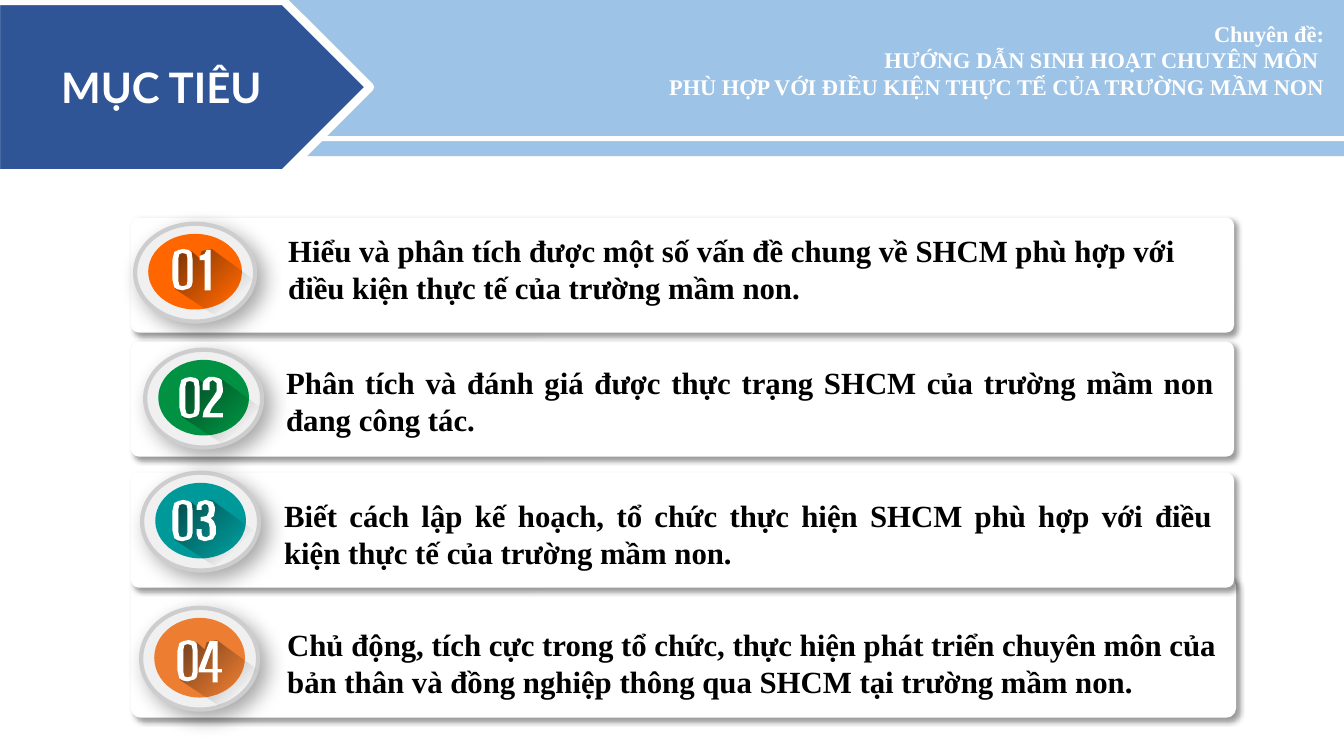
from dataclasses import dataclass

from lxml import etree
from pptx import Presentation
from pptx.dml.color import RGBColor
from pptx.enum.shapes import MSO_SHAPE
from pptx.enum.text import MSO_ANCHOR, PP_ALIGN
from pptx.oxml.ns import qn
from pptx.util import Inches, Pt

RECT, ROUNDED = MSO_SHAPE.RECTANGLE, MSO_SHAPE.ROUNDED_RECTANGLE
OVAL, PENTAGON = MSO_SHAPE.OVAL, MSO_SHAPE.PENTAGON
LEFT, RIGHT, CENTER, JUSTIFY = PP_ALIGN.LEFT, PP_ALIGN.RIGHT, PP_ALIGN.CENTER, PP_ALIGN.JUSTIFY
MIDDLE = MSO_ANCHOR.MIDDLE


@dataclass(frozen=True)
class Theme:
    white: str = "FFFFFF"
    ink: str = "000000"
    band: str = "9DC3E6"
    tag: str = "2F5597"
    ring: str = "F0F0F0"
    rim: str = "CDCDD0"
    facet: str = "0D0D0D"
    body_font: str = "Times New Roman"
    title_font: str = "Lato"
    title_size: int = 30
    goal_size: int = 22
    topic_size: int = 16


@dataclass(frozen=True)
class Goal:
    """One card; text, ring, zero and digit are offsets from the card's corner."""
    card: tuple
    text: tuple
    ring: tuple
    zero: tuple
    digit: tuple
    number: int
    colour: str
    align: int
    wording: str


THEME = Theme()
TOPIC = (
    "Chuyên đề:",
    "HƯỚNG DẪN SINH HOẠT CHUYÊN MÔN ",
    "PHÙ HỢP VỚI ĐIỀU KIỆN THỰC TẾ CỦA TRƯỜNG MẦM NON",
)
GOALS = (
    Goal((1.3, 5.72, 10.96, 1.4), (1.45, 0.44, 9.41, 0.84), (0.1, 0.31, 1.16, 1.01),
         (0.46, 0.63), (0.67, 0.64), 4, "ED7D31", JUSTIFY,
         "Chủ động, tích cực trong tổ chức, thực hiện phát triển chuyên môn của "
         "bản thân và đồng nghiệp thông qua SHCM tại trường mầm non."),
    Goal((1.3, 4.69, 10.94, 1.14), (1.42, 0.19, 9.4, 0.84), (0.11, 0, 1.16, 0.97),
         (0.41, 0.27), (0.65, 0.27), 3, "009999", JUSTIFY,
         "Biết cách lập kế hoạch, tổ chức thực hiện SHCM phù hợp với điều kiện "
         "thực tế của trường mầm non."),
    Goal((1.3, 2.16, 10.94, 1.14), (1.46, 0.09, 9.48, 0.84), (0.04, 0.06, 1.19, 0.97),
         (0.41, 0.31), (0.68, 0.32), 1, "FF6600", LEFT,
         "Hiểu và phân tích được một số vấn đề chung về SHCM phù hợp với "
         "điều kiện thực tế của trường mầm non."),
    Goal((1.3, 3.39, 10.94, 1.14), (1.44, 0.17, 9.4, 0.84), (0.14, 0.08, 1.16, 0.97),
         (0.48, 0.35), (0.71, 0.35), 2, "009242", JUSTIFY,
         "Phân tích và đánh giá được thực trạng SHCM của trường mầm non đang công tác."),
)
# Outlines in hundredths of an inch, one tuple of points per contour
DIGITS = {
    0: (((11, 0), (16, 1), (19, 3), (20, 10), (20, 33), (19, 37), (17, 39), (10, 41),
         (5, 40), (2, 38), (0, 30), (0, 11), (2, 3), (6, 1)),
        ((10, 37), (14, 36), (15, 32), (15, 9), (14, 5), (10, 4), (7, 5), (6, 9),
         (6, 32), (7, 36))),
    1: (((0, 6), (5, 4), (7, 0), (11, 0), (11, 40), (5, 40), (5, 10), (0, 10)),),
    2: (((0, 8), (1, 4), (3, 2), (6, 0), (11, 0), (16, 1), (19, 3), (20, 11), (20, 15),
         (18, 20), (12, 27), (9, 31), (7, 36), (20, 36), (20, 40), (0, 40), (1, 34),
         (4, 29), (11, 19), (14, 14), (14, 6), (10, 3), (7, 5), (7, 13), (0, 13)),),
    3: (((5, 29), (5, 33), (6, 36), (10, 37), (13, 35), (13, 28), (12, 23), (7, 21),
         (4, 21), (4, 17), (10, 16), (12, 12), (12, 8), (11, 5), (8, 4), (5, 6),
         (5, 10), (0, 10), (0, 7), (2, 2), (9, 0), (16, 2), (18, 7), (18, 11), (17, 16),
         (14, 18), (17, 21), (19, 26), (19, 34), (16, 39), (8, 41), (2, 39), (0, 34),
         (0, 29)),),
    4: (((11, 0), (19, 0), (19, 28), (23, 28), (23, 31), (19, 31), (19, 41), (14, 41),
         (14, 31), (0, 31), (0, 28)),
        ((14, 28), (14, 6), (10, 17), (6, 28))),
}
FACET = (((38, 64), (0, 39), (1, 3), (16, 2), (24, 9), (26, 2), (36, 0), (83, 34)),)


def inches(box):
    return [Inches(length) for length in box]


def within(card, offset):
    """Box or point given by its offset from the corner of a card."""
    return (card[0] + offset[0], card[1] + offset[1], *offset[2:])


def cast_shadow(properties, alpha, blur, distance):
    effects = etree.SubElement(properties, qn("a:effectLst"))
    shadow = etree.SubElement(effects, qn("a:outerShdw"), blurRad=str(Pt(blur)),
                              dist=str(Pt(distance)), dir=str(45 * 60000),
                              algn="tl", rotWithShape="0")
    colour = etree.SubElement(shadow, qn("a:srgbClr"), val=THEME.ink)
    etree.SubElement(colour, qn("a:alpha"), val=str(alpha * 1000))


def paint(shape, fill, line=None, width=0, shadow=None):
    shape.fill.solid()
    shape.fill.fore_color.rgb = RGBColor.from_string(fill)
    if line:
        shape.line.color.rgb = RGBColor.from_string(line)
        shape.line.width = Pt(width)
    else:
        shape.line.fill.background()
    if shadow:
        cast_shadow(shape._element.spPr, *shadow)
    else:
        shape.shadow.inherit = False


def add_preset(shapes, kind, box, fill, **style):
    shape = shapes.add_shape(kind, *inches(box))
    paint(shape, fill, **style)
    return shape


def add_outline(shapes, contours, corner, fill):
    builder = None
    for start, *rest in contours:
        if builder is None:
            builder = shapes.build_freeform(*start, scale=Inches(0.01))
        else:
            builder.move_to(*start)
        builder.add_line_segments(rest, close=True)
    shape = builder.convert_to_shape(*inches(corner))
    paint(shape, fill)
    return shape


def write(frame, lines, font, size, colour, align, anchor=None):
    frame.word_wrap = True
    if anchor is not None:
        frame.vertical_anchor = anchor
    for index, line in enumerate(lines):
        para = frame.add_paragraph() if index else frame.paragraphs[0]
        para.add_run().text = line
        para.alignment = align
        para.font.name, para.font.size, para.font.bold = font, Pt(size), True
        para.font.color.rgb = RGBColor.from_string(colour)


def add_header(shapes, box):
    left, top, width, height = box
    add_preset(shapes, RECT, box, THEME.band)
    topic = shapes.add_textbox(*inches((left + 6.36, top + 0.19, 6.87, 0.81)))
    write(topic.text_frame, TOPIC, THEME.body_font, THEME.topic_size, THEME.white, RIGHT, MIDDLE)
    for para in topic.text_frame.paragraphs:
        cast_shadow(para.runs[0]._r.get_or_add_rPr(), 40, 4, 3)
    add_preset(shapes, RECT, (left + width / 6, top + height - 0.2, width * 5 / 6, 0.05), THEME.white)


def add_facet(shapes, corner):
    """Long shade that fades away from the digits."""
    facet = add_outline(shapes, FACET, corner, THEME.facet)
    facet.fill.gradient()
    facet.fill.gradient_angle = 315
    for stop, position, alpha in zip(facet.fill.gradient_stops, (0, 0.73), (55, 0)):
        stop.color.rgb = RGBColor.from_string(THEME.facet)
        stop.position = position
        colour = stop._gs.find(qn("a:srgbClr"))
        etree.SubElement(colour, qn("a:alpha"), val=str(alpha * 1000))


def add_badge(shapes, goal):
    left, top, width, height = ring = within(goal.card, goal.ring)
    add_preset(shapes, OVAL, ring, THEME.ring, line=THEME.rim, width=3, shadow=(35, 15, 7))
    add_preset(shapes, OVAL, (left + 0.13, top + 0.1, width - 0.26, height - 0.22), goal.colour)
    zero = within(goal.card, goal.zero)
    add_facet(shapes, (zero[0] + 0.03, zero[1] + 0.01))
    add_outline(shapes, DIGITS[0], zero, THEME.white)
    add_outline(shapes, DIGITS[goal.number], within(goal.card, goal.digit), THEME.white)


def add_goal(shapes, goal):
    group = shapes.add_group_shape().shapes
    card = add_preset(group, ROUNDED, goal.card, THEME.white, shadow=(40, 4, 3))
    card.adjustments[0] = 0.067
    add_badge(group, goal)
    text = group.add_textbox(*inches(within(goal.card, goal.text)))
    write(text.text_frame, [goal.wording], THEME.body_font, THEME.goal_size, THEME.ink, goal.align)


def add_title_tag(shapes, box):
    tag = add_preset(shapes, PENTAGON, box, THEME.tag, line=THEME.white, width=6)
    write(tag.text_frame, ["MỤC TIÊU"], THEME.title_font, THEME.title_size,
          THEME.white, CENTER, MIDDLE)


def main():
    deck = Presentation()
    deck.slide_width, deck.slide_height = inches((13.33, 7.5))
    shapes = deck.slides.add_slide(deck.slide_layouts[6]).shapes
    add_header(shapes, (0, 0, 13.33, 1.55))
    for goal in GOALS:
        add_goal(shapes, goal)
    add_title_tag(shapes, (-0.04, 0.01, 3.71, 1.71))
    deck.save("out.pptx")


if __name__ == "__main__":
    main()
